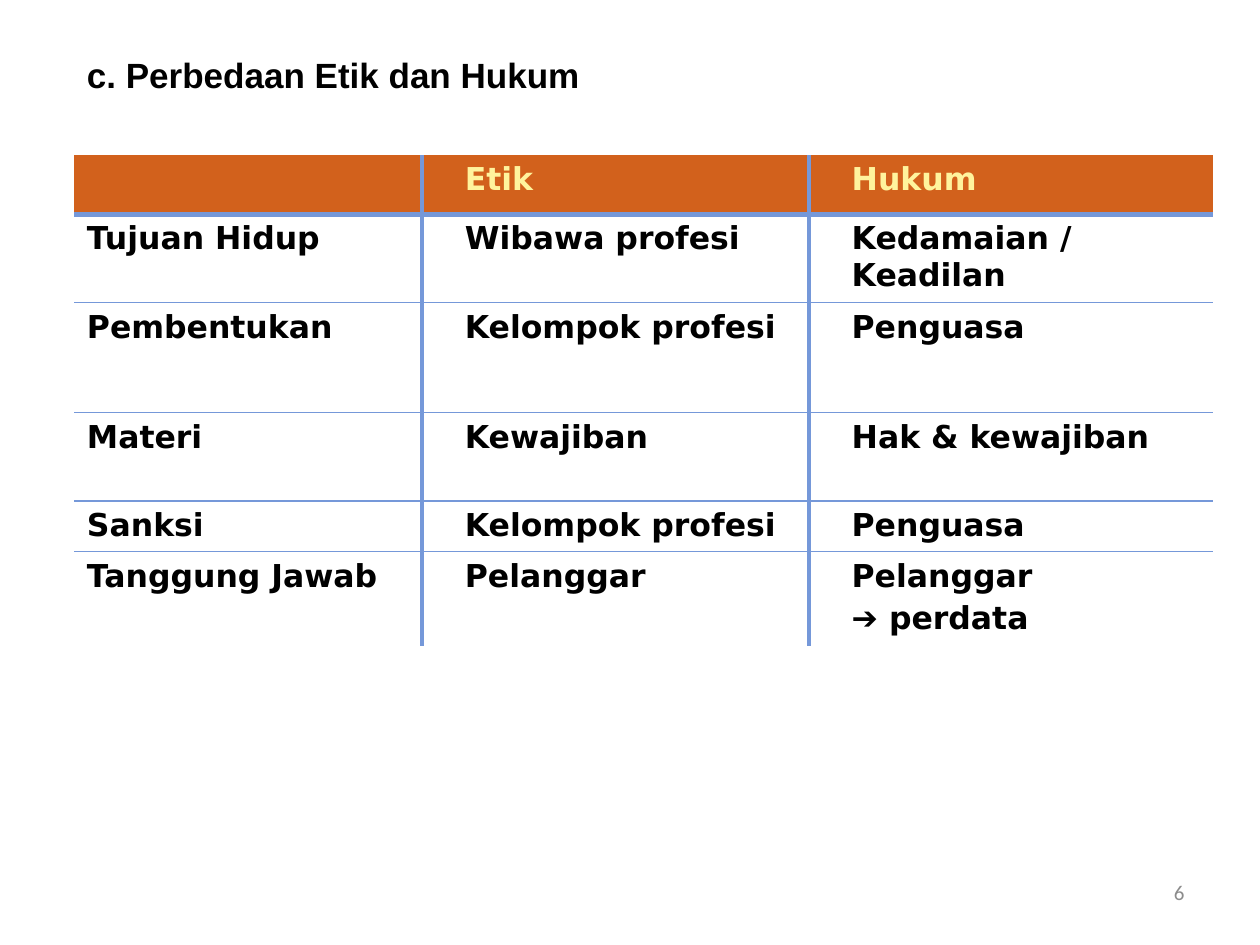
from lxml import etree
from pptx import Presentation
from pptx.dml.color import RGBColor
from pptx.enum import text
from pptx.oxml import ns
from pptx.util import Pt

COLORS = {"header": "D2611C", "heading": "FFF39D", "rule": "7598D9",
          "ink": "000000", "number": "8C8C8C"}

# Spacer columns follow the first and second text columns
COLUMN_WIDTHS = [198.7, 17.3, 203.8, 16.6, 213.8]
TEXT_COLUMNS = [0, 2, 4]
ROWS = [  # height, bottom rule width, cell texts
    (33.8, 3, ["", "Etik", "Hukum"]),
    (50.6, 1, ["Tujuan Hidup", "Wibawa profesi", "Kedamaian / Keadilan"]),
    (33.8, 0, ["Pembentukan", "Kelompok profesi", "Penguasa"]),
    (29, 1, ["", "", ""]),
    (50.6, 1, ["Materi", "Kewajiban", "Hak & kewajiban"]),
    (28.5, 1, ["Sanksi", "Kelompok profesi", "Penguasa"]),
    (53.6, 0, ["Tanggung Jawab", "Pelanggar", "Pelanggar\n➔ perdata"]),
]


class SlideBuilder:
    body_font = "DejaVu Sans"
    body_size = 18

    def __init__(self, deck):
        self.page = deck.slides.add_slide(deck.slide_layouts[5])

    def format_text(self, frame, font, size, color, bold=False,
                    align=text.PP_ALIGN.LEFT):
        for index, para in enumerate(frame.paragraphs):
            para.alignment = align
            para.space_before = Pt(0.2 * size if index else 0)
            for span in para.runs:
                span.font.name = font
                span.font.size = Pt(size)
                span.font.bold = bold
                span.font.color.rgb = RGBColor.from_string(COLORS[color])

    def place(self, box, left, top, width, height):
        box.left, box.top = Pt(left), Pt(top)
        box.width, box.height = Pt(width), Pt(height)

    def title(self, words, *area):
        box = self.page.shapes.title
        self.place(box, *area)
        frame = box.text_frame
        frame.text = words
        frame.vertical_anchor = text.MSO_ANCHOR.MIDDLE
        frame.auto_size = text.MSO_AUTO_SIZE.NONE
        self.format_text(frame, "Arial", 20, "ink", bold=True)

    def page_number(self, number, *area):
        box = self.page.shapes.add_textbox(*map(Pt, area))
        frame = box.text_frame
        frame.word_wrap = True
        frame.text = str(number)
        frame.vertical_anchor = text.MSO_ANCHOR.MIDDLE
        self.format_text(frame, "Calibri", 12, "number",
                         align=text.PP_ALIGN.RIGHT)

    def borders(self, cell, **widths):
        properties = cell._tc.get_or_add_tcPr()
        for side in "LRTB":
            width = widths.get(side, 0)
            line = etree.SubElement(properties, ns.qn(f"a:ln{side}"),
                                    w=str(Pt(width)))
            if width:
                fill = etree.SubElement(line, ns.qn("a:solidFill"))
                etree.SubElement(fill, ns.qn("a:srgbClr"), val=COLORS["rule"])
            else:
                etree.SubElement(line, ns.qn("a:noFill"))

    def table(self, left, top):
        heights = [height for height, _, _ in ROWS]
        frame = self.page.shapes.add_table(
            len(ROWS), len(COLUMN_WIDTHS), Pt(left), Pt(top),
            Pt(sum(COLUMN_WIDTHS)), Pt(sum(heights)))
        table = frame.table
        table.first_row = table.horz_banding = False
        for column, width in zip(table.columns, COLUMN_WIDTHS):
            column.width = Pt(width)
        rule_above = 0
        for r, (height, rule_below, words) in enumerate(ROWS):
            table.rows[r].height = Pt(height)
            for c in range(len(COLUMN_WIDTHS)):
                cell = table.cell(r, c)
                # Thick vertical rules stand to the left of each spacer
                self.borders(cell, T=rule_above, B=rule_below,
                             L=3 * (c in (1, 3)), R=3 * (c in (0, 2)))
                if r == 0:
                    cell.fill.solid()
                    cell.fill.fore_color.rgb = RGBColor.from_string(
                        COLORS["header"])
                else:
                    cell.fill.background()
                if c in TEXT_COLUMNS:
                    cell.text_frame.text = words[TEXT_COLUMNS.index(c)]
                    self.format_text(cell.text_frame, self.body_font,
                                     self.body_size,
                                     "ink" if r else "heading", bold=True)
            rule_above = rule_below


def main():
    deck = Presentation()
    deck.slide_width, deck.slide_height = Pt(720), Pt(540)
    slide = SlideBuilder(deck)
    # Heading and page number
    slide.title("c. Perbedaan Etik dan Hukum", 42.5, 27, 391, 31)
    slide.page_number(6, 516, 492, 168, 36)
    # Comparison of ethics and law
    slide.table(42.5, 88.6)
    deck.save("out.pptx")


if __name__ == "__main__":
    main()
